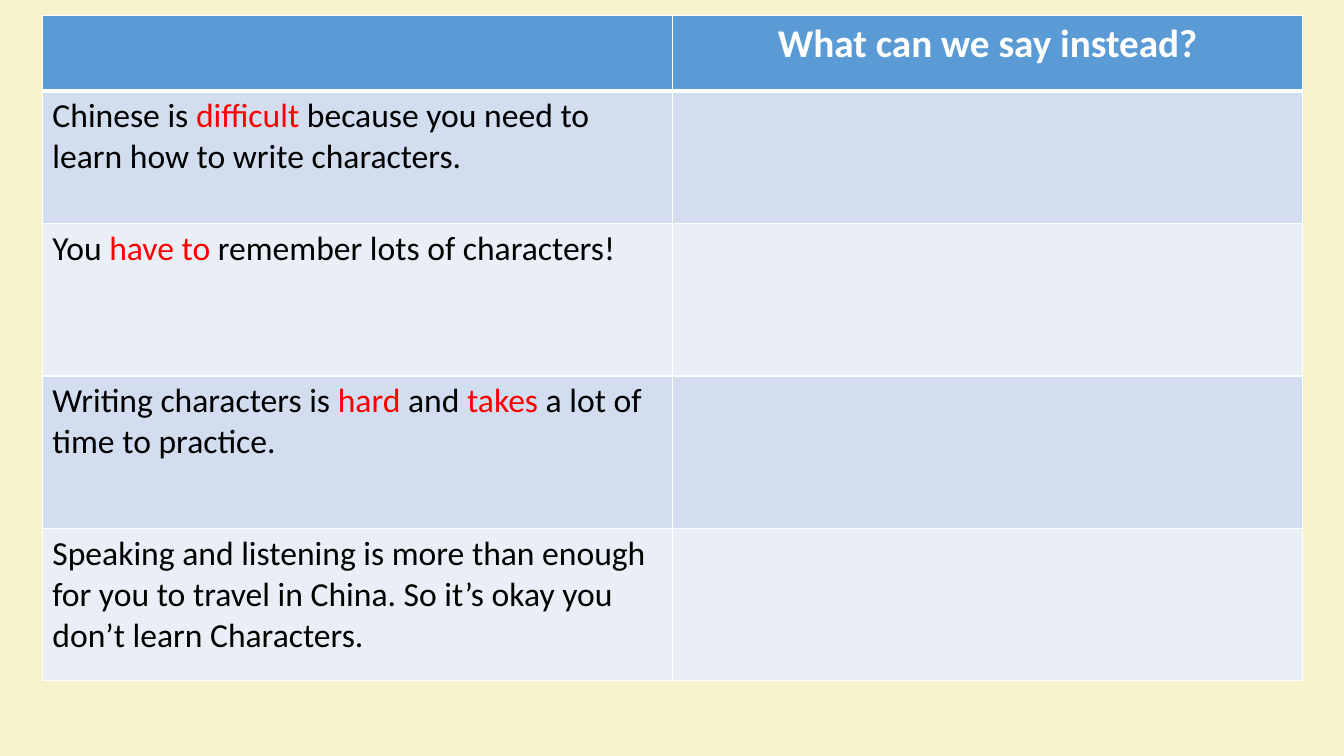
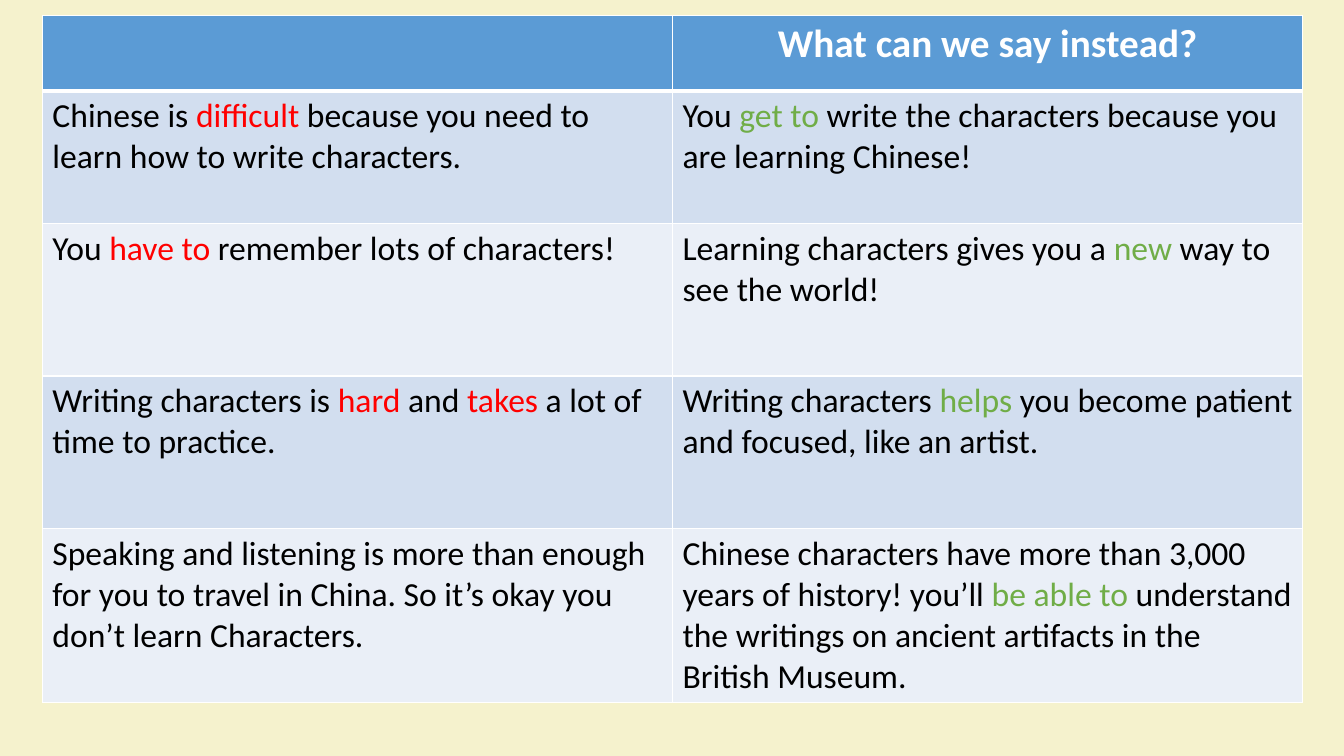
from dataclasses import dataclass

from lxml.etree import SubElement
from pptx import Presentation
from pptx.dml.color import RGBColor
from pptx.enum.text import PP_ALIGN as Align
from pptx.oxml.ns import qn
from pptx.util import Inches, Pt


@dataclass(frozen=True)
class Theme:
    background: str = "F5F2CD"
    header: str = "5B9BD5"
    bands: tuple = ("D2DEEF", "EAEFF7")
    white: str = "FFFFFF"
    text: str = "000000"
    negative: str = "FF0000"
    positive: str = "70AD47"
    font: str = "Calibri"
    header_size: int = 28
    body_size: int = 24
    thin_line: int = 1
    thick_line: int = 3


theme = Theme()


def write_text(cell, text, color=theme.text, accent=theme.negative,
               size=theme.body_size, bold=False, align=Align.LEFT):
    """Write text into a cell; parts between asterisks take the accent colour."""
    paragraph = cell.text_frame.paragraphs[0]
    paragraph.alignment = align
    for index, part in enumerate(text.split("*")):
        if part:
            run = paragraph.add_run()
            run.text = part
            run.font.name = theme.font
            run.font.size = Pt(size)
            run.font.bold = bold
            run.font.color.rgb = RGBColor.from_string(accent if index % 2 else color)


def style_cell(cell, fill, top=theme.thin_line, bottom=theme.thin_line):
    """Give a cell white borders and a solid fill."""
    properties = cell._tc.get_or_add_tcPr()
    widths = {"L": theme.thin_line, "R": theme.thin_line, "T": top, "B": bottom}
    for side, width in widths.items():
        line = SubElement(properties, qn(f"a:ln{side}"), w=str(Pt(width)))
        line_fill = SubElement(line, qn("a:solidFill"))
        SubElement(line_fill, qn("a:srgbClr"), val=theme.white)
    cell.fill.solid()
    cell.fill.fore_color.rgb = RGBColor.from_string(fill)


# Content: each complaint and its positive answer
header_text = "What can we say instead?"
statements = [
    ("Chinese is *difficult *because you need to learn how to write characters.",
     "You *get to *write the characters because you are learning Chinese!"),
    ("You *have to *remember lots of characters!",
     "Learning characters gives you a *new *way to see the world!"),
    ("Writing characters is *hard* and *takes *a lot of time to practice.",
     "Writing characters *helps *you become patient and focused, like an artist."),
    ("Speaking and listening is more than enough for you to travel in China. "
     "So it’s okay you don’t learn Characters.",
     "Chinese characters have more than 3,000 years of history! you’ll "
     "*be able to *understand the writings on ancient artifacts in the British Museum."),
]
column_width = 6.25
row_heights = [0.75, 1.32, 1.51, 1.51, 1.51]

# Presentation with a shared background
presentation = Presentation()
presentation.slide_width = Inches(13.33)
presentation.slide_height = Inches(7.5)
background_fill = presentation.slide_master.background.fill
background_fill.solid()
background_fill.fore_color.rgb = RGBColor.from_string(theme.background)
blank_layout = presentation.slide_layouts[6]

# The question slide leaves the answers empty, the next one shows them
for show_answers in (False, True):
    slide = presentation.slides.add_slide(blank_layout)
    table = slide.shapes.add_table(
        len(row_heights), 2, Inches(0.42), Inches(0.15),
        Inches(2 * column_width), Inches(sum(row_heights))).table
    for column in table.columns:
        column.width = Inches(column_width)
    for row, height in zip(table.rows, row_heights):
        row.height = Inches(height)

    # Header row
    for cell in table.rows[0].cells:
        style_cell(cell, theme.header, bottom=theme.thick_line)
    write_text(table.cell(0, 1), header_text, color=theme.white,
               size=theme.header_size, bold=True, align=Align.CENTER)

    # Statement rows in alternating bands
    for index, (complaint, answer) in enumerate(statements):
        complaint_cell, answer_cell = table.rows[index + 1].cells
        for cell in (complaint_cell, answer_cell):
            style_cell(cell, theme.bands[index % 2],
                       top=theme.thin_line if index else theme.thick_line)
        write_text(complaint_cell, complaint)
        if show_answers:
            write_text(answer_cell, answer, accent=theme.positive)

presentation.save("out.pptx")
